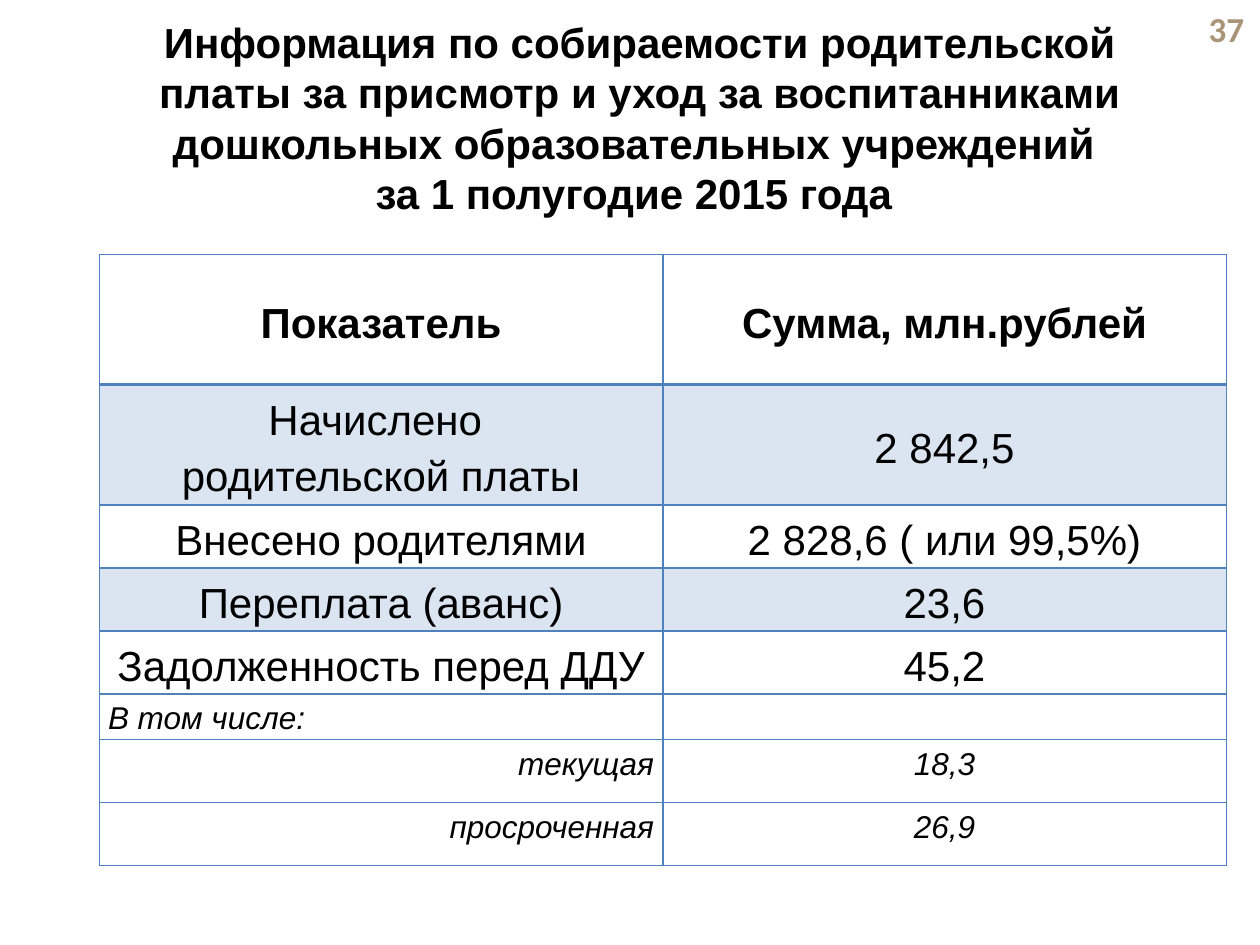
from lxml.etree import SubElement
from pptx import Presentation
from pptx.dml.color import RGBColor
from pptx.enum.text import MSO_ANCHOR as ANCHOR, PP_ALIGN as ALIGN
from pptx.oxml.ns import qn
from pptx.util import Pt

BLUE = "4F81BD"
BLACK = "000000"


def color(value):
    return RGBColor.from_string(value)


def write(tf, text, size=24, font="Arial", fill=BLACK, bold=False, italic=False,
          align=ALIGN.CENTER, anchor=ANCHOR.MIDDLE, spacing=None):
    tf.word_wrap = True
    tf.vertical_anchor = anchor
    p = tf.paragraphs[0]
    p.text = text
    p.alignment = align
    p.line_spacing = spacing
    for r in p.runs:
        f = r.font
        f.name, f.size, f.bold, f.italic = font, Pt(size), bold, italic
        f.color.rgb = color(fill)
    # The end mark sets the height of an empty line
    p._p.get_or_add_endParaRPr().set("sz", str(size * 100))


def add_text(slide, box, text, **fmt):
    tb = slide.shapes.add_textbox(*map(Pt, box))
    write(tb.text_frame, text, **fmt)


def set_borders(cell, bottom=1, top=1):
    tcPr = cell._tc.get_or_add_tcPr()
    for side, width in (("L", 1), ("R", 1), ("T", top), ("B", bottom)):
        ln = SubElement(tcPr, qn(f"a:ln{side}"), w=str(Pt(width)))
        solid = SubElement(ln, qn("a:solidFill"))
        SubElement(solid, qn("a:srgbClr"), val=BLUE)


def set_fill(cell, shaded):
    if not shaded:
        cell.fill.background()
        return
    cell.fill.solid()
    cell.fill.fore_color.rgb = color(BLUE)
    clr = cell._tc.tcPr.find(qn("a:solidFill")).find(qn("a:srgbClr"))
    SubElement(clr, qn("a:alpha"), val="20000")


def add_fee_table(slide, box):
    head = dict(bold=True)
    main = dict()
    detail = dict(size=18, italic=True, anchor=ANCHOR.TOP)
    # Label, amount, row height, text format, label alignment
    rows = [
        ("Показатель", "Сумма, млн.рублей", 74, head, ALIGN.CENTER),
        ("Начислено \vродительской платы", "2 842,5", 64.5, main, ALIGN.CENTER),
        ("Внесено родителями", "2\u00a0828,6 ( или 99,5%)", 36, main, ALIGN.CENTER),
        ("Переплата (аванс)", "23,6", 36, main, ALIGN.CENTER),
        ("Задолженность перед ДДУ", "45,2", 36, main, ALIGN.CENTER),
        ("В том числе:", "", 19, detail, ALIGN.LEFT),
        ("текущая", "18,3", 36, detail, ALIGN.RIGHT),
        ("просроченная", "26,9", 36, detail, ALIGN.RIGHT),
    ]
    table = slide.shapes.add_table(len(rows), 2, *map(Pt, box)).table
    table.first_row = table.horz_banding = False
    for i, (label, amount, height, fmt, label_align) in enumerate(rows):
        table.rows[i].height = Pt(height)
        for j, (text, align) in enumerate([(label, label_align), (amount, ALIGN.CENTER)]):
            cell = table.cell(i, j)
            cell.margin_left = cell.margin_right = Pt(5)
            cell.margin_top = cell.margin_bottom = 0
            write(cell.text_frame, text, align=align, spacing=1.2,
                  **{k: v for k, v in fmt.items() if k != "anchor"})
            cell.vertical_anchor = fmt.get("anchor", ANCHOR.MIDDLE)
            set_borders(cell, bottom=2 if i == 0 else 1, top=2 if i == 1 else 1)
            set_fill(cell, shaded=i in (1, 3))


def main():
    prs = Presentation()
    prs.slide_width, prs.slide_height = Pt(720), Pt(540)
    s = prs.slides.add_slide(prs.slide_layouts[6])

    # Title
    add_text(s, (48, 16, 635, 102),
             "Информация по собираемости родительской платы за присмотр и уход "
             "за воспитанниками дошкольных образовательных учреждений "
             "\vза 1 полугодие 2015 года ", bold=True)
    # Table of parental fees
    add_fee_table(s, (56.75, 145.5, 644, 338))
    # Page number
    add_text(s, (672, 4, 46, 24), "37", size=20, font="Calibri", fill="A99477",
             bold=True, align=ALIGN.RIGHT)

    prs.save("out.pptx")


if __name__ == "__main__":
    main()
